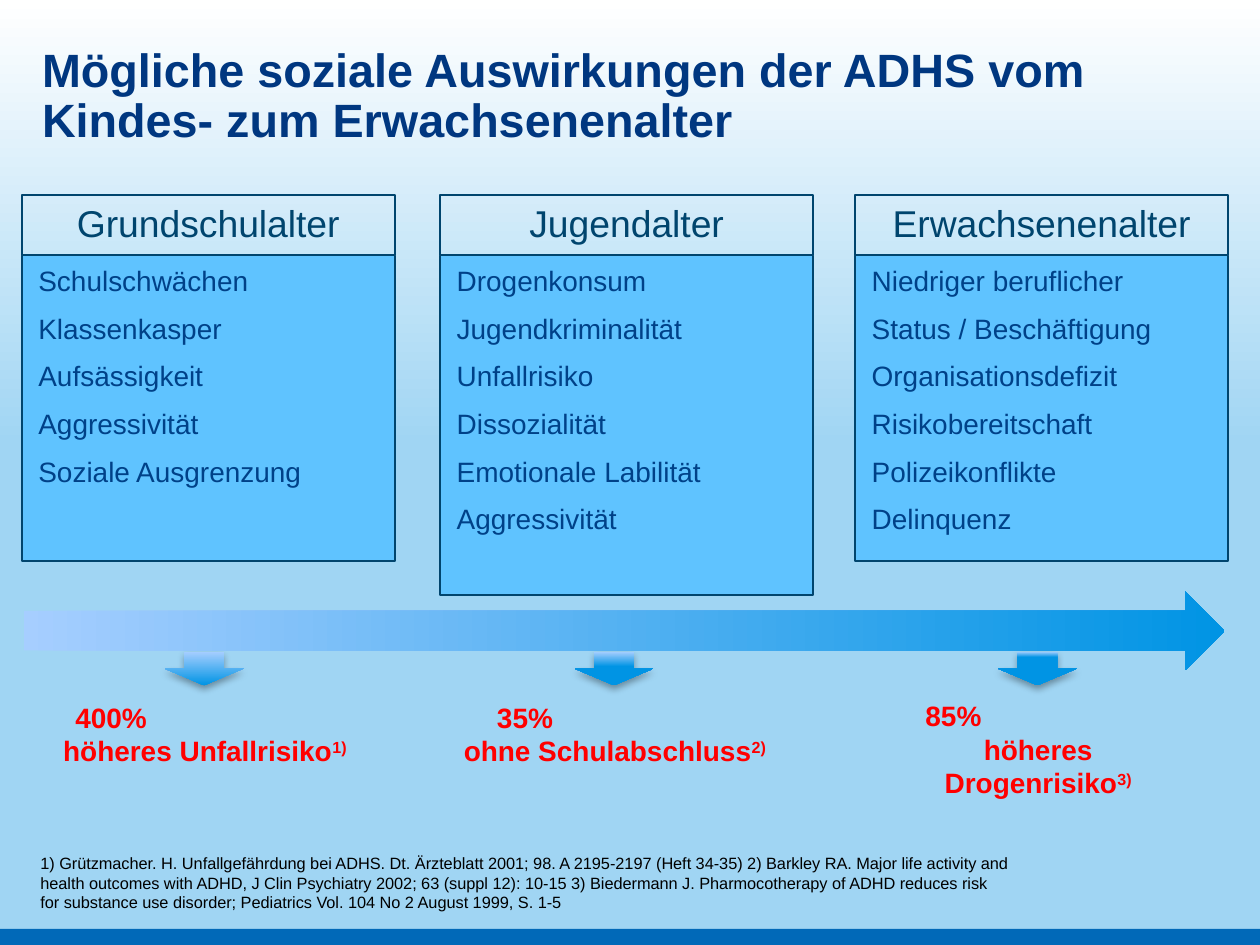
"""Builds a slide on the social effects of ADHS from childhood to adult age."""
from dataclasses import dataclass

from lxml import etree
from pptx import Presentation
from pptx import util as u
from pptx.dml.color import RGBColor
from pptx.enum import shapes, text
from pptx.oxml.ns import qn


@dataclass(frozen=True)
class Theme:
    font: str = "Arial"
    title: str = "003780"
    edge: str = "00456E"
    item: str = "004188"
    card: str = "5FC3FF"
    alert: str = "FF0000"
    note: str = "000000"
    strip: str = "0169B8"
    pale: str = "A6CEFF"
    deep: str = "0094E4"
    top: str = "FFFFFF"
    base: str = "A0D5F3"
    big: int = 20
    head: int = 16
    body: int = 12
    small: int = 7


theme = Theme()
rgb = RGBColor.from_string
Inches = u.Inches
form = shapes.MSO_SHAPE
align = text.PP_ALIGN
anchor = text.MSO_ANCHOR


def write(frame, lines, size, color, bold=False, side=align.LEFT, hold=anchor.TOP,
          gap=0, after=0, space=1.0, indent=0, mark=None):
    frame.word_wrap = True
    frame.auto_size = text.MSO_AUTO_SIZE.NONE
    frame.vertical_anchor = hold
    for num, line in enumerate(lines):
        para = frame.paragraphs[0] if num == 0 else frame.add_paragraph()
        para.alignment = align.LEFT if indent and num == 0 else side
        para.line_spacing = space
        para.space_before = u.Pt(gap if num else 0)
        para.space_after = u.Pt(after)
        props = para._p.get_or_add_pPr()
        props.set("marL", str(Inches(indent if num == 0 else 0)))
        props.set("indent", "0")
        etree.SubElement(props, qn("a:buNone"))
        para.text = line
        if mark and num == len(lines) - 1:
            run = para.add_run()
            run.text = mark
            run._r.get_or_add_rPr().set("baseline", "30000")
        for run in para.runs:
            run.font.name = theme.font
            run.font.size = u.Pt(size)
            run.font.bold = bold
            run.font.color.rgb = rgb(color)


def blend(fill, first, last, stop, angle):
    fill.gradient()
    fill.gradient_angle = angle
    for point, color, place in zip(fill.gradient_stops, (first, last), (0, stop)):
        point.color.rgb = rgb(color)
        point.position = place


deck = Presentation()
deck.slide_width = Inches(7.5)
deck.slide_height = deck.slide_width * 3 // 4
slide = deck.slides.add_slide(deck.slide_layouts[1])
blend(slide.background.fill, theme.top, theme.base, 0.47, 270)

strip = slide.shapes.add_shape(form.RECTANGLE, 0, Inches(5.53), Inches(7.5), Inches(0.12))
strip.shadow.inherit = False
strip.fill.solid()
strip.fill.fore_color.rgb = rgb(theme.strip)
strip.line.fill.background()

title, note = slide.shapes.title, slide.placeholders[1]
for holder, place in ((title, (0.15, 0.23, 7.21, 0.85)), (note, (0.14, 4.85, 5.97, 0.63))):
    holder.left, holder.top, holder.width, holder.height = map(Inches, place)
write(title.text_frame, ["Mögliche soziale Auswirkungen der ADHS vom \vKindes- zum Erwachsenenalter"],
      theme.big, theme.title, bold=True, space=0.9)
write(note.text_frame, [
    "1) Grützmacher. H. Unfallgefährdung bei ADHS. Dt. Ärzteblatt 2001; 98. A 2195-2197 "
    "(Heft 34-35) 2) Barkley RA. Major life activity and health outcomes with ADHD, "
    "J Clin Psychiatry 2002; 63 (suppl 12): 10-15 3) Biedermann J. Pharmocotherapy of ADHD "
    "reduces risk for substance use disorder; Pediatrics Vol. 104 No 2 August 1999, S. 1-5"],
    theme.small, theme.note, hold=anchor.BOTTOM, after=3)

risks = [
    (2.55, 4.12, 0.5, 0.31, ["35%", "ohne Schulabschluss"], "2)"),
    (0.11, 4.12, 0.5, 0.24, ["400%", "höheres Unfallrisiko"], "1)"),
    (5.07, 4.11, 0.71, 0.34, ["85%", "höheres", "Drogenrisiko"], "3)"),
]
for left, top, tall, indent, lines, mark in risks:
    box = slide.shapes.add_textbox(Inches(left), Inches(top), Inches(2.22), Inches(tall))
    write(box.text_frame, lines, theme.body, theme.alert, bold=True, side=align.CENTER,
          indent=indent, mark=mark)

cards = [
    (0.13, 1.82, "Grundschulalter", ["Schulschwächen", "Klassenkasper", "Aufsässigkeit",
                                     "Aggressivität", "Soziale Ausgrenzung"]),
    (2.62, 2.02, "Jugendalter", ["Drogenkonsum", "Jugendkriminalität", "Unfallrisiko",
                                 "Dissozialität", "Emotionale Labilität", "Aggressivität"]),
    (5.09, 1.82, "Erwachsenenalter", ["Niedriger beruflicher", "Status / Beschäftigung",
                                      "Organisationsdefizit", "Risikobereitschaft",
                                      "Polizeikonflikte", "Delinquenz"]),
]
for left, tall, name, items in cards:
    card = slide.shapes.add_shape(form.RECTANGLE, Inches(left), Inches(1.52), Inches(2.22), Inches(tall))
    head = slide.shapes.add_shape(form.RECTANGLE, Inches(left), Inches(1.16), Inches(2.22), Inches(0.36))
    for box in (card, head):
        box.shadow.inherit = False
        box.line.color.rgb = rgb(theme.edge)
        box.line.width = u.Pt(0.75)
    card.fill.solid()
    card.fill.fore_color.rgb = rgb(theme.card)
    head.fill.background()
    write(card.text_frame, items, theme.body, theme.item, gap=6)
    write(head.text_frame, [name], theme.head, theme.edge, side=align.CENTER,
          hold=anchor.MIDDLE, space=0.95)

for left, stop in ((0.98, 1), (3.42, 0.44), (5.94, 0.16)):
    arrow = slide.shapes.add_shape(form.DOWN_ARROW, Inches(left), Inches(3.88), Inches(0.47), Inches(0.2))
    arrow.line.fill.background()
    blend(arrow.fill, theme.pale, theme.deep, stop, 270)
    arrow.shadow.inherit = False
    glow = etree.SubElement(arrow._element.spPr.find(qn("a:effectLst")), qn("a:outerShdw"),
                            blurRad=str(u.Pt(3.1)), dist=str(u.Pt(1.8)), dir="5400000", rotWithShape="0")
    shade = etree.SubElement(glow, qn("a:srgbClr"), val=theme.note)
    etree.SubElement(shade, qn("a:alpha"), val="35000")

course = slide.shapes.add_shape(form.RIGHT_ARROW, Inches(0.14), Inches(3.52), Inches(7.15), Inches(0.47))
course.shadow.inherit = False
course.line.fill.background()
blend(course.fill, theme.pale, theme.deep, 1, 0)

deck.save("out.pptx")
